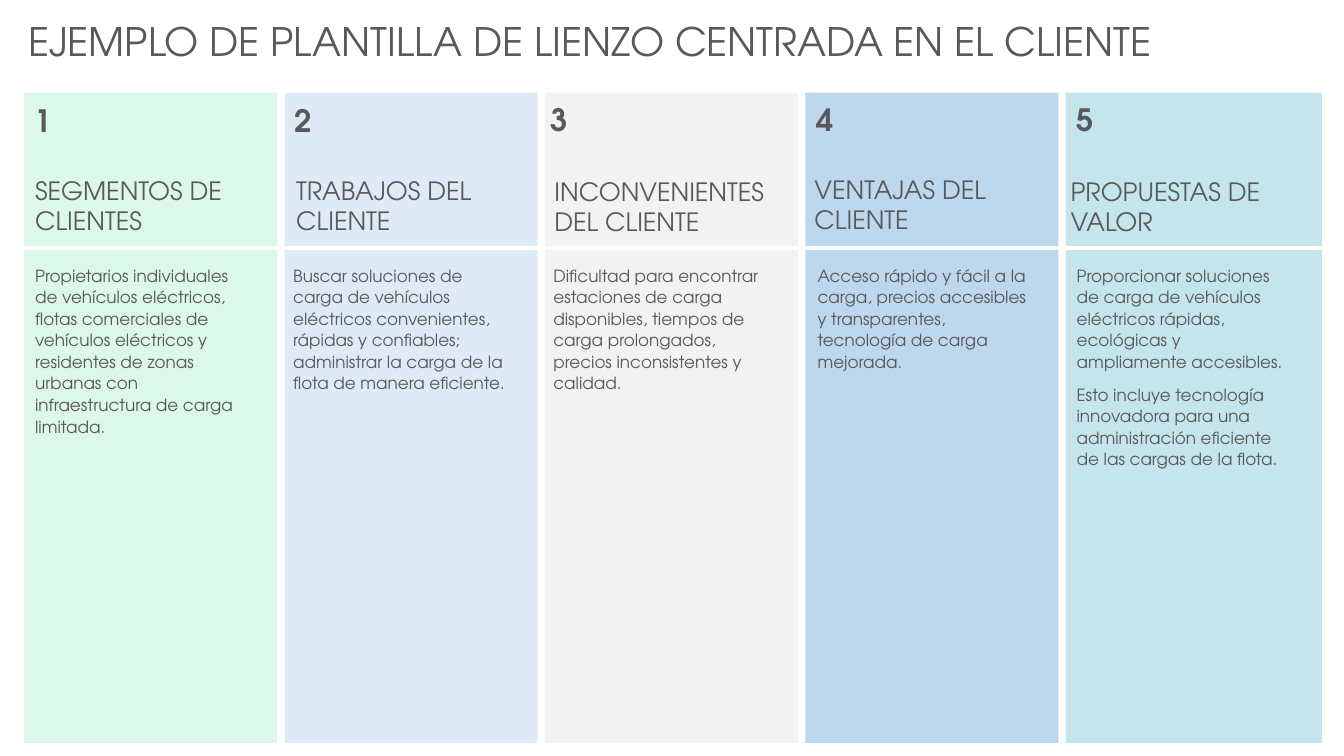
from dataclasses import dataclass

from lxml import etree
from pptx import Presentation
from pptx.dml.color import RGBColor
from pptx.enum.shapes import MSO_CONNECTOR, MSO_SHAPE
from pptx.enum.text import MSO_AUTO_SIZE
from pptx.oxml.ns import qn
from pptx.util import Inches, Pt

FONT = "TeX Gyre Adventor"
GRAY = RGBColor(0x59, 0x59, 0x59)
WHITE = RGBColor(0xFF, 0xFF, 0xFF)
MINT = RGBColor(0xDC, 0xF8, 0xEB)
PALE_BLUE = RGBColor(0xDE, 0xEB, 0xF7)
LIGHT_GRAY = RGBColor(0xF2, 0xF2, 0xF2)
SKY_BLUE = RGBColor(0xBD, 0xD7, 0xEE)
AQUA = RGBColor(0xC5, 0xE5, 0xED)

FIRST_LEFT, LAST_LEFT = 0.24, 10.57


@dataclass
class Column:
    color: RGBColor
    width: float
    number_at: tuple
    heading: str
    heading_at: tuple
    body: list
    body_left: float
    body_width: float


COLUMNS = [
    Column(MINT, 2.51, (0.24, 0.93), "SEGMENTOS DE CLIENTES", (0.25, 1.69),
           ["Propietarios individuales de vehículos eléctricos, flotas comerciales de "
            "vehículos eléctricos y residentes de zonas urbanas con infraestructura "
            "de carga limitada."], 0.25, 2.38),
    Column(PALE_BLUE, 2.51, (2.82, 0.93), "TRABAJOS DEL \nCLIENTE", (2.84, 1.69),
           ["Buscar soluciones de carga de vehículos eléctricos convenientes, rápidas "
            "y confiables; administrar la carga de la flota de manera eficiente."],
           2.81, 2.35),
    Column(LIGHT_GRAY, 2.51, (5.36, 0.92), "INCONVENIENTES DEL CLIENTE", (5.4, 1.7),
           ["Dificultad para encontrar estaciones de carga disponibles, tiempos de "
            "carga prolongados, precios inconsistentes y calidad."], 5.39, 2.35),
    Column(SKY_BLUE, 2.51, (8, 0.92), "VENTAJAS DEL \nCLIENTE", (7.98, 1.68),
           ["Acceso rápido y fácil a la carga, precios accesibles y transparentes, "
            "tecnología de carga mejorada."], 8.01, 2.38),
    Column(AQUA, 2.54, (10.58, 0.92), "PROPUESTAS DE VALOR", (10.52, 1.7),
           ["Proporcionar soluciones de carga de vehículos eléctricos rápidas, "
            "ecológicas y ampliamente accesibles.",
            "Esto incluye tecnología innovadora para una administración eficiente "
            "de las cargas de la flota."], 10.58, 2.25),
]


def write_text(frame, paragraphs, *, size, bold=False, line_spacing=None, space_after=None):
    for index, words in enumerate(paragraphs):
        paragraph = frame.add_paragraph() if index else frame.paragraphs[0]
        paragraph.text = words
        paragraph.line_spacing = line_spacing
        paragraph.space_after = space_after
        for run in paragraph.runs:
            run.font.name = FONT
            run.font.size = Pt(size)
            run.font.bold = bold
            run.font.color.rgb = GRAY


class Canvas:
    """Holds the current slide and draws its elements in one style."""

    def __init__(self, slide):
        self.shapes = slide.shapes

    def panel(self, left, top, width, height, color):
        panel = self.shapes.add_shape(MSO_SHAPE.RECTANGLE, Inches(left), Inches(top),
                                      Inches(width), Inches(height))
        panel.shadow.inherit = False
        panel.fill.solid()
        panel.fill.fore_color.rgb = color
        panel.line.fill.background()

    def divider(self, left, right, y):
        divider = self.shapes.add_connector(MSO_CONNECTOR.STRAIGHT, Inches(left), Inches(y),
                                            Inches(right), Inches(y))
        divider.line.color.rgb = WHITE
        divider.line.width = Pt(2.25)
        etree.SubElement(divider.element.spPr, qn("a:effectLst"))

    def text(self, left, top, width, height, paragraphs, grow=False, **style):
        box = self.shapes.add_textbox(Inches(left), Inches(top), Inches(width), Inches(height))
        frame = box.text_frame
        frame.word_wrap = True
        frame.auto_size = MSO_AUTO_SIZE.SHAPE_TO_FIT_TEXT if grow else MSO_AUTO_SIZE.NONE
        write_text(frame, paragraphs, **style)


def main():
    presentation = Presentation()
    presentation.slide_width, presentation.slide_height = Inches(13.33), Inches(7.5)
    canvas = Canvas(presentation.slides.add_slide(presentation.slide_layouts[6]))

    # Column panels and the line under their headings
    pitch = (LAST_LEFT - FIRST_LEFT) / (len(COLUMNS) - 1)
    for index, column in enumerate(COLUMNS):
        canvas.panel(FIRST_LEFT + index * pitch, 0.92, column.width, 6.45, column.color)
    canvas.divider(FIRST_LEFT, 13.2, 2.46)

    # Title
    canvas.text(0.18, 0.12, 12.95, 0.57,
                ["EJEMPLO DE PLANTILLA DE LIENZO CENTRADA EN EL CLIENTE"], grow=True, size=28)

    # Number, heading and body of each column
    spacing = {"line_spacing": 1.07, "space_after": Pt(8)}
    for number, column in enumerate(COLUMNS, start=1):
        canvas.text(*column.number_at, 0.46, 0.64, [str(number)], size=22, bold=True, **spacing)
        canvas.text(*column.heading_at, 2.5, 0.71, [column.heading], grow=True, size=18)
        body_height = 1.57 if len(column.body) == 1 else 1.98
        canvas.text(column.body_left, 2.57, column.body_width, body_height, column.body,
                    size=12, **spacing)

    presentation.save("out.pptx")


if __name__ == "__main__":
    main()
